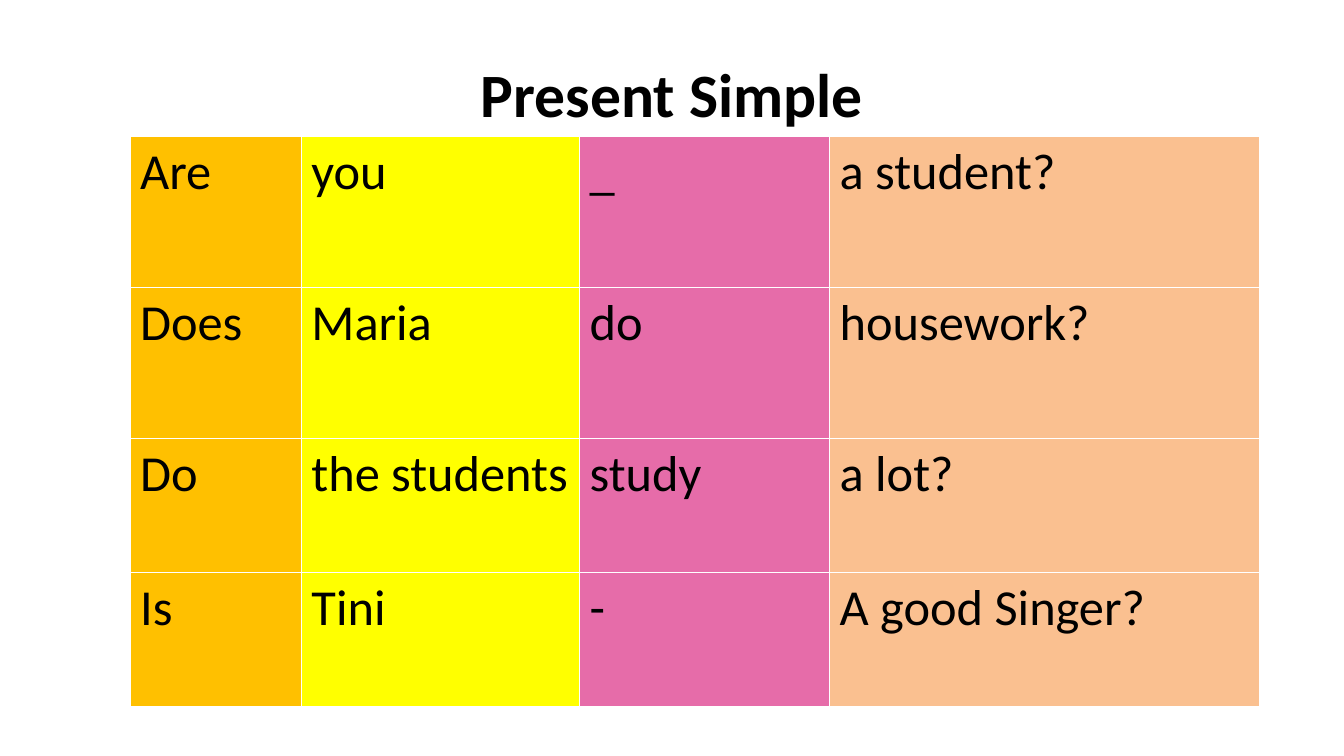
from dataclasses import dataclass

from lxml.etree import SubElement
from pptx import Presentation
from pptx.dml.color import RGBColor as Rgb
from pptx.enum.text import MSO_ANCHOR as Anchor, PP_ALIGN as Align
from pptx.oxml.ns import qn
from pptx.util import Pt


@dataclass(frozen=True)
class Theme:
    """Fonts, sizes and colours of the slide."""
    font: str = "Calibri"
    title_size: int = 44
    word_size: int = 36
    border_width: int = 1
    ink: str = "000000"
    border: str = "FFFFFF"
    columns: tuple = ("FFC000", "FFFF00", "E66CA9", "FAC090")


THEME = Theme()
QUESTIONS = (
    ("Are", "you", "_", "a student?"),
    ("Does", "Maria", "do", "housework?"),
    ("Do", "the students", "study", "a lot?"),
    ("Is", "Tini", "-", "A good Singer?"),
)
COLUMN_WIDTHS = (122.4, 198.7, 178.6, 307.4)
ROW_HEIGHTS = (108, 108, 95.8, 95.8)


def write(text_frame, words, size, bold=False):
    """Set the words of a text frame and format them."""
    text_frame.text = words
    font = text_frame.paragraphs[0].runs[0].font
    font.name, font.size, font.bold = THEME.font, Pt(size), bold
    font.color.rgb = Rgb.from_string(THEME.ink)


def add_title(slide, words):
    """Place the centred heading in the title placeholder."""
    title = slide.shapes.title
    title.left, title.top, title.width, title.height = Pt(48), Pt(21.6), Pt(864), Pt(90)
    write(title.text_frame, words, THEME.title_size, bold=True)
    title.text_frame.vertical_anchor = Anchor.MIDDLE
    title.text_frame.paragraphs[0].alignment = Align.CENTER


def add_borders(cell):
    """Draw a thin line on all four sides of a cell."""
    properties = cell._tc.get_or_add_tcPr()
    for position, side in enumerate(("a:lnL", "a:lnR", "a:lnT", "a:lnB")):
        line = SubElement(properties, qn(side), w=str(Pt(THEME.border_width)))
        fill = SubElement(line, qn("a:solidFill"))
        SubElement(fill, qn("a:srgbClr"), val=THEME.border)
        properties.insert(position, line)


def format_cell(cell, words, colour):
    """Fill a cell with its column colour and word."""
    write(cell.text_frame, words, THEME.word_size)
    cell.fill.solid()
    cell.fill.fore_color.rgb = Rgb.from_string(colour)
    add_borders(cell)


def add_question_table(slide):
    """Build the table of questions, one colour for each column."""
    table = slide.shapes.add_table(
        len(QUESTIONS), len(COLUMN_WIDTHS), Pt(92.9), Pt(97.2),
        Pt(sum(COLUMN_WIDTHS)), Pt(sum(ROW_HEIGHTS))).table
    table.first_row = table.horz_banding = False
    for column, width in zip(table.columns, COLUMN_WIDTHS):
        column.width = Pt(width)
    for row, height, question in zip(table.rows, ROW_HEIGHTS, QUESTIONS):
        row.height = Pt(height)
        for cell, words, colour in zip(row.cells, question, THEME.columns):
            format_cell(cell, words, colour)


def main():
    """Create the slide and save it."""
    deck = Presentation()
    deck.slide_width, deck.slide_height = Pt(960), Pt(540)
    slide = deck.slides.add_slide(deck.slide_layouts.get_by_name("Title Only"))
    add_title(slide, "Present Simple")
    add_question_table(slide)
    deck.save("out.pptx")


if __name__ == "__main__":
    main()
